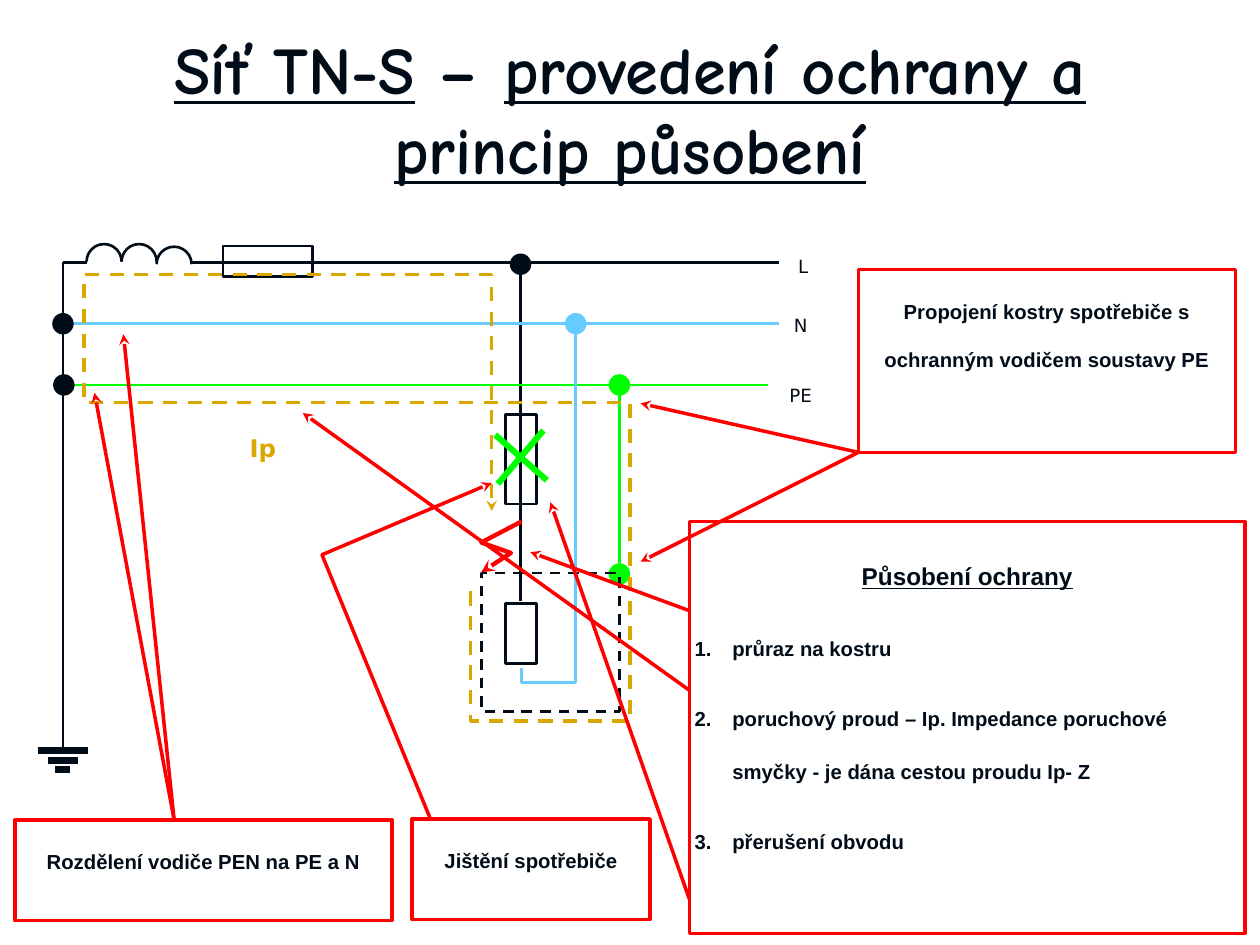
import pptx
import pptx.util
import pptx.dml.color
import pptx.enum.dml
import pptx.enum.shapes
import pptx.enum.text
import pptx.oxml
import pptx.oxml.ns

Pt = pptx.util.Pt
SHAPE = pptx.enum.shapes.MSO_SHAPE
INK, BLUE, GREEN, GOLD, RED = "000C18", "66CCFF", "00FF00", "DAA600", "FF0000"
LEFT, RIGHT, DROP = 36, 445, 297.5
LIVE, NEUTRAL, EARTH = 150, 185, 220
DOT = 11.5

TITLE = [("Síť TN-S", True), (" – ", False), ("provedení ochrany a princip působení", True)]
WIRES = [
    ((DROP, 343.5), (DROP, 157), INK),
    ((42, NEUTRAL), (RIGHT, NEUTRAL), BLUE),
    ((49.5, LIVE), (LEFT, LIVE), INK),
    ((109.5, LIVE), (RIGHT, LIVE), INK),
    ((LEFT, LIVE), (LEFT, 429), INK),
    ((42.5, EARTH), (439, EARTH), GREEN),
    ((354, EARTH), (354, 322), GREEN),
]
GROUND_BARS = [(429, 14.4), (434.4, 8.6), (440, 4.3)]
COILS = [(49.5, 139.5), (69.5, 139.5), (89.5, 141)]
DOTS = [
    (36.5, EARTH, INK), (LEFT, NEUTRAL, INK), (DROP, 151, INK),
    (329, NEUTRAL, BLUE), (354, EARTH, GREEN), (354, 328, GREEN),
]
PARTS = [
    (127.5, 140.5, 51, 17.5, False), (289, 237, 17.5, 51, False),
    (289, 345, 17.5, 34, False), (275, 327.5, 79, 79, True),
]
WIRE_LABELS = [("L", 445, 135.5, 28), ("N", 445, 169, 25), ("PE", 445, 209, 25)]
NEUTRAL_LOOP = [(DROP, 382.5), (DROP, 390.5), (329, 390.5), (329, NEUTRAL)]
FAULT = [(DROP, 298), (275, 309.5), (292.5, 315.5), (275, 327)]
FAULT_CURRENT = [(269, 338), (269, 412), (360, 412), (360, 230.5),
                 (48, 230.5), (48, 157), (281, 157), (281, 292.5)]
FUSE_POINTER = [(246.5, 468.5), (184.5, 317), (281, 276)]
CROSS = [((310.5, 246), (284.5, 276.5)), ((312.5, 274.5), (283, 248.5))]
CALLOUTS = [
    ("Rozdělení vodiče PEN na PE a N", 8.5, 468.5, 215.5, 57.5),
    ("Propojení kostry spotřebiče s ochranným vodičem soustavy PE", 490.5, 154, 215.5, 104.5),
    ("Jištění spotřebiče", 235.5, 468, 136, 57.5),
]
EFFECTS = [
    "1.\tprůraz na kostru",
    "2.\tporuchový proud – Ip. Impedance poruchové smyčky - je dána cestou proudu Ip- Z",
    "3.\tpřerušení obvodu",
]
POINTERS = [
    ((99.5, 468.5), (54, 224.5)), ((99.5, 468.5), (70.5, 191)),
    ((490.5, 258.5), (366, 230.5)), ((490.5, 258.5), (366, 321)),
    ((394, 349), (303, 315.5)), ((394, 394.5), (173, 236)), ((394, 514), (314.5, 287)),
]


def color(value):
    return pptx.dml.color.RGBColor.from_string(value)


def style_line(shape, value, width, dash=False, arrow=False):
    shape.line.color.rgb = color(value)
    shape.line.width = Pt(width)
    if dash:
        shape.line.dash_style = pptx.enum.dml.MSO_LINE.DASH
    if arrow:
        tail = pptx.oxml.parse_xml(f'<a:tailEnd {pptx.oxml.ns.nsdecls("a")} type="stealth"/>')
        shape.line._get_or_add_ln().append(tail)


def add_line(page, start, end, value, width=1.5, arrow=False):
    line = page.shapes.add_connector(
        pptx.enum.shapes.MSO_CONNECTOR.STRAIGHT, *map(Pt, start + end))
    style_line(line, value, width, arrow=arrow)
    line._element.spPr.append(
        pptx.oxml.parse_xml(f'<a:effectLst {pptx.oxml.ns.nsdecls("a")}/>'))


def add_path(page, points, value, width, dash=False, arrow=False):
    builder = page.shapes.build_freeform(*points[0], scale=float(Pt(1)))
    builder.add_line_segments(points[1:], close=False)
    path = builder.convert_to_shape()
    path.fill.background()
    path.shadow.inherit = False
    style_line(path, value, width, dash, arrow)


def add_shape(page, kind, left, top, width, height, value, weight=1.5, dash=False):
    shape = page.shapes.add_shape(kind, *map(Pt, (left, top, width, height)))
    shape.shadow.inherit = False
    shape.fill.background()
    style_line(shape, value, weight, dash)
    return shape


def add_text(para, text, font="Arial", size=20, value=INK, bold=True, underline=False, lowered=True):
    span = para.add_run()
    span.text = text
    span.font.name, span.font.size = font, Pt(size)
    span.font.bold, span.font.underline = bold, underline
    span.font.color.rgb = color(value)
    if lowered:
        span._r.get_or_add_rPr().set("baseline", "-25000")


def set_frame(shape, side=7.2, edge=3.6, anchor="TOP"):
    frame = shape.text_frame
    frame.word_wrap = True
    frame.margin_left = frame.margin_right = Pt(side)
    frame.margin_top = frame.margin_bottom = Pt(edge)
    frame.vertical_anchor = pptx.enum.text.MSO_ANCHOR[anchor]
    return frame


def set_para(para, align="CENTER", before=10, spacing=None, hang=0):
    para.alignment = pptx.enum.text.PP_ALIGN[align]
    para.space_before = Pt(before)
    para.line_spacing = spacing
    if hang:
        para._p.get_or_add_pPr().set("marL", str(Pt(hang)))
        para._p.get_or_add_pPr().set("indent", str(-Pt(hang)))
    return para


def add_label(page, text, left, top, width, height, inset=(0, 0), anchor="MIDDLE", **style):
    box = page.shapes.add_textbox(*map(Pt, (left, top, width, height)))
    frame = set_frame(box, *inset, anchor)
    add_text(set_para(frame.paragraphs[0]), text, font="DejaVu Sans", **style)


def add_title(page):
    title = page.shapes.title
    title.left, title.top, title.width, title.height = map(Pt, (36, 11.5, 648, 100))
    para = set_para(set_frame(title, anchor="MIDDLE").paragraphs[0], before=0)
    for text, underline in TITLE:
        add_text(para, text, font="Comic Neue", size=38, underline=underline, lowered=False)


def add_circuit(page):
    for start, end, value in WIRES:
        add_line(page, start, end, value)
    for y, half in GROUND_BARS:
        add_line(page, (LEFT - half, y), (LEFT + half, y), INK, 4)
    for left, top in COILS:
        coil = add_shape(page, SHAPE.ARC, left, top, 20, 20, INK)
        coil.adjustments[0], coil.adjustments[1] = 108, 0
    for x, y, value in DOTS:
        dot = add_shape(page, SHAPE.OVAL, x - DOT / 2, y - DOT / 2, DOT, DOT, value, 0.75)
        dot.fill.solid()
        dot.fill.fore_color.rgb = color(value)
    for left, top, width, height, dash in PARTS:
        add_shape(page, SHAPE.RECTANGLE, left, top, width, height, INK, dash=dash)
    for text, left, top, width in WIRE_LABELS:
        add_label(page, text, left, top, width, 21.5, size=18, bold=False)
    add_path(page, NEUTRAL_LOOP, BLUE, 1.5)


def add_fault(page):
    add_path(page, FAULT, RED, 2.5, arrow=True)
    add_path(page, FAULT_CURRENT, GOLD, 2, dash=True, arrow=True)
    add_label(page, "Ip", 127.5, 228, 45.5, 37, (7.2, 3.6), "TOP", size=24, value=GOLD)
    for start, end in CROSS:
        add_line(page, start, end, GREEN, 3.5)


def add_callouts(page):
    effects = add_shape(page, SHAPE.RECTANGLE, 394, 298, 317.5, 235.5, RED, 2)
    frame = set_frame(effects, side=2.9)
    heading = set_para(frame.paragraphs[0], before=12, spacing=1.1)
    add_text(heading, "Působení ochrany", size=24, underline=True)
    for text in EFFECTS:
        add_text(set_para(frame.add_paragraph(), "LEFT", spacing=1.1, hang=21.6), text)
    for text, *place in CALLOUTS:
        callout = add_shape(page, SHAPE.RECTANGLE, *place, RED, 2)
        add_text(set_para(set_frame(callout).paragraphs[0]), text)
    for start, end in POINTERS:
        add_line(page, start, end, RED, 2, arrow=True)
    add_path(page, FUSE_POINTER, RED, 2, arrow=True)


def main():
    """Build the TN-S network protection slide."""
    deck = pptx.Presentation()
    deck.slide_width, deck.slide_height = Pt(720), Pt(540)
    page = deck.slides.add_slide(deck.slide_layouts[5])
    add_title(page)
    add_circuit(page)
    add_fault(page)
    add_callouts(page)
    deck.save("out.pptx")


if __name__ == "__main__":
    main()
